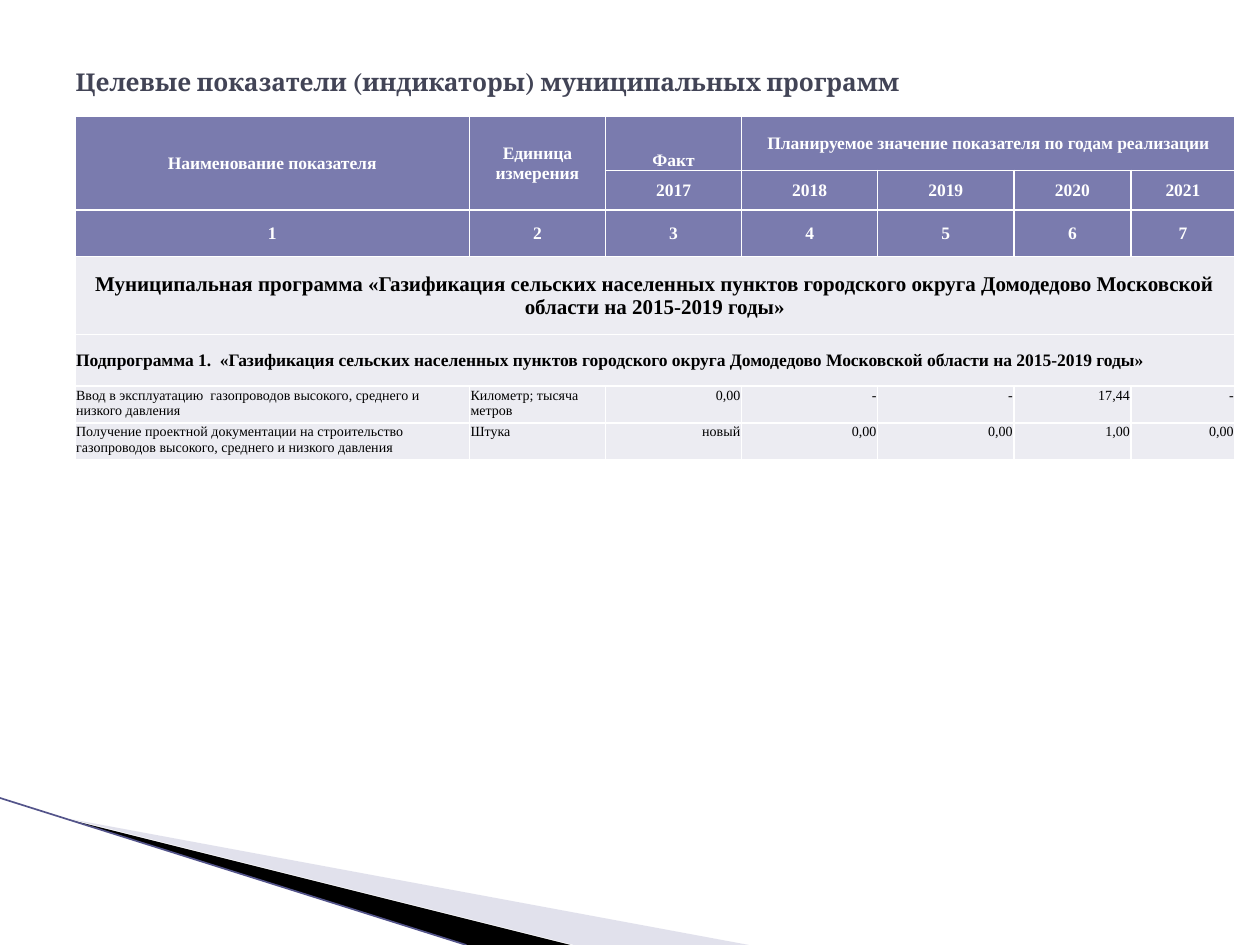
from lxml.etree import SubElement as Sub
from pptx import Presentation
from pptx.dml.color import RGBColor as Rgb
from pptx.enum.shapes import MSO_CONNECTOR as Conn
from pptx.enum.text import MSO_ANCHOR as Anchor, PP_ALIGN as Align
from pptx.oxml.ns import qn
from pptx.util import Pt

WHITE = Rgb(0xFF, 0xFF, 0xFF)
BLACK = Rgb(0, 0, 0)
SLATE = Rgb(0x42, 0x44, 0x56)
HEAD = Rgb(0x7A, 0x7B, 0xAE)
PALE = Rgb(0xEC, 0xEC, 0xF2)
LILAC = Rgb(0xB6, 0xB6, 0xD1)
EDGE = Rgb(0x53, 0x54, 0x8A)

COLS = [225.4, 77.8, 77.8, 77.8, 77.8, 67, 59.4]
ROWS = [31, 22.3, 26.6, 44.6, 29.5, 20.9, 20.9]
SPANS = [(0, 0, 1, 0), (0, 1, 1, 1), (0, 3, 0, 6), (3, 0, 3, 6), (4, 0, 4, 6)]
DATA = [
    ["Наименование показателя", "Единица измерения", "Факт",
     "Планируемое значение показателя по годам реализации"],
    ["", "", "2017", "2018", "2019", "2020", "2021"],
    ["1", "2", "3", "4", "5", "6", "7"],
    ["Муниципальная программа «Газификация сельских населенных пунктов "
     "городского округа Домодедово Московской области на 2015-2019 годы»"],
    ["Подпрограмма 1.  «Газификация сельских населенных пунктов "
     "городского округа Домодедово Московской области на 2015-2019 годы»"],
    ["Ввод в эксплуатацию  газопроводов высокого, среднего и низкого давления",
     "Километр; тысяча метров", "0,00", "-", "-", "17,44", "-"],
    ["Получение проектной документации на строительство газопроводов "
     "высокого, среднего и низкого давления",
     "Штука", "новый", "0,00", "0,00", "1,00", "0,00"],
]


def set_font(para, name, size, color, bold):
    """Format every run of a paragraph."""
    for run in para.runs:
        font = run.font
        font.name, font.size, font.bold = name, Pt(size), bold
        font.color.rgb = color


def add_poly(slide, x, y, points, color, alpha=None):
    """Draw a filled polygon with points relative to x, y."""
    first, *rest = [(x + dx, y + dy) for dx, dy in points]
    pen = slide.shapes.build_freeform(*first, scale=Pt(1))
    pen.add_line_segments(rest, close=True)
    shape = pen.convert_to_shape()
    shape.shadow.inherit = False
    shape.fill.solid()
    shape.fill.fore_color.rgb = color
    shape.line.fill.background()
    if alpha:
        tint = shape._element.spPr.find(".//" + qn("a:srgbClr"))
        Sub(tint, qn("a:alpha"), val=str(alpha * 1000))


def add_swoosh(slide, x, y, w, h):
    """Draw the corner wedges and their edge line."""
    add_poly(slide, x, y, [(39.6, 12.4), (w, h), (w - 100, h)], LILAC, 40)
    add_poly(slide, x, y, [(38, 11.5), (w - 102.5, h), (w - 162, h)], BLACK)
    line = slide.shapes.add_connector(
        Conn.STRAIGHT, Pt(x), Pt(y), Pt(x + w - 162), Pt(y + h))
    line.line.color.rgb = EDGE
    line.line.width = Pt(0.95)
    Sub(line._element.spPr, qn("a:effectLst"))


def set_title(slide, x, y, w, h):
    """Place and format the slide title."""
    title = slide.shapes.title
    title.left, title.top, title.width, title.height = map(Pt, (x, y, w, h))
    frame = title.text_frame
    frame.text = "Целевые показатели (индикаторы) муниципальных программ"
    frame.vertical_anchor = Anchor.MIDDLE
    frame.paragraphs[0].alignment = Align.LEFT
    set_font(frame.paragraphs[0], "Cambria", 14, SLATE, True)


def add_rules(cell):
    """Give a cell white borders on all sides."""
    props = cell._tc.get_or_add_tcPr()
    for side in ("lnL", "lnR", "lnT", "lnB"):
        rule = Sub(props, qn("a:" + side), w=str(Pt(1)))
        Sub(Sub(rule, qn("a:solidFill")), qn("a:srgbClr"), val=str(WHITE))


def style_cell(cell, row, col):
    """Format a cell by its place in the table."""
    add_rules(cell)
    cell.fill.solid()
    cell.fill.fore_color.rgb = HEAD if row < 3 else PALE
    cell.margin_left = cell.margin_right = cell.margin_top = Pt(0.7)
    cell.margin_bottom = 0
    cell.vertical_anchor = Anchor.MIDDLE if row < 5 else Anchor.TOP
    if (row, col) == (0, 2):
        cell.vertical_anchor = Anchor.BOTTOM
    para = cell.text_frame.paragraphs[0]
    if row < 4:
        para.alignment = Align.CENTER
    else:
        para.alignment = Align.RIGHT if col > 1 else Align.LEFT
    size = 12 if row == 3 else 10 if row < 5 else 8
    set_font(para, "Times New Roman", size, WHITE if row < 3 else BLACK, row < 5)


def add_grid(slide, x, y, w, h):
    """Build the table of indicators."""
    table = slide.shapes.add_table(
        len(ROWS), len(COLS), Pt(x), Pt(y), Pt(w), Pt(h)).table
    for col, width in zip(table.columns, COLS):
        col.width = Pt(width)
    for row, height in zip(table.rows, ROWS):
        row.height = Pt(height)
    for top, left, low, right in SPANS:
        table.cell(top, left).merge(table.cell(low, right))
    for i, texts in enumerate(DATA):
        for j in range(len(COLS)):
            cell = table.cell(i, j)
            if j < len(texts) and texts[j]:
                cell.text_frame.text = texts[j]
            style_cell(cell, i, j)


def main():
    """Build and save the slide."""
    deck = Presentation()
    deck.slide_width, deck.slide_height = Pt(720), Pt(540)
    slide = deck.slides.add_slide(deck.slide_layouts[5])
    add_swoosh(slide, 0, 456, 428.5, 84)
    set_title(slide, 36, 21.6, 648, 49.7)
    add_grid(slide, 42.8, 66.3, sum(COLS), sum(ROWS))
    deck.save("out.pptx")


if __name__ == "__main__":
    main()
